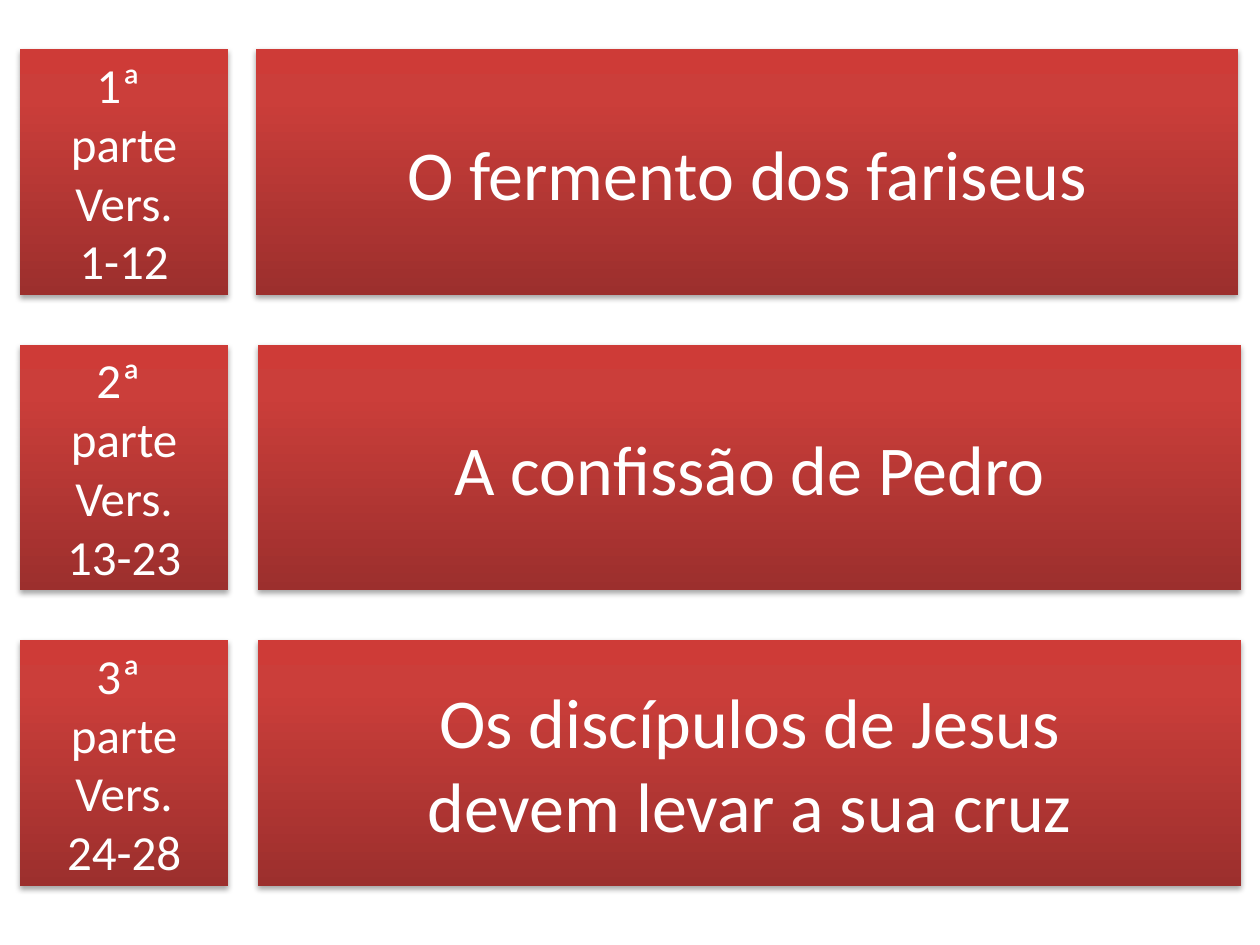
import pptx
import pptx.util
import pptx.dml.color
import pptx.enum.shapes
import pptx.enum.text
import pptx.oxml
import pptx.oxml.ns

Inches = pptx.util.Inches
RGB = pptx.dml.color.RGBColor
WHITE = RGB(0xFF, 0xFF, 0xFF)
DARK = RGB(0x9C, 0x2F, 0x2D)
MID = RGB(0xCB, 0x3E, 0x3A)
LIGHT = RGB(0xCE, 0x3B, 0x37)
BLACK = RGB(0, 0, 0)

PARTS = [
    (["1ª ", "parte", "Vers.", "1-12"], ["O fermento dos fariseus"], 2.03),
    (["2ª ", "parte", "Vers.", "13-23"], ["A confissão de Pedro"], 2.05),
    (["3ª ", "parte", "Vers.", "24-28"],
     ["Os discípulos de Jesus", "devem levar a sua cruz"], 2.05),
]
STOPS = [(0, DARK), (80, MID), (100, LIGHT)]
TOP, STEP, HIGH = 0.39, 2.345, 1.95
LABEL = {"left": 0.16, "width": 1.65, "size": 28}
TITLE = {"width": 7.8, "size": 40}


def add_xml(parent, body):
    space = pptx.oxml.ns.nsdecls("a")
    parent.append(pptx.oxml.parse_xml(body.replace(" ", f" {space} ", 1)))


def paint(shape):
    shape.fill.gradient()
    shape.fill.gradient_angle = 90
    shape.line.fill.background()
    shape.shadow.inherit = False
    props = shape.element.spPr
    stops = props.find(".//" + pptx.oxml.ns.qn("a:gsLst"))
    for old in list(stops):
        stops.remove(old)
    for spot, color in STOPS:
        add_xml(stops, f'<a:gs pos="{spot * 1000}"><a:srgbClr val="{color}"/></a:gs>')
    add_xml(props.find(pptx.oxml.ns.qn("a:effectLst")),
            f'<a:outerShdw blurRad="{pptx.util.Pt(3.1)}" dist="{pptx.util.Pt(1.8)}" '
            f'dir="5400000" rotWithShape="0"><a:srgbClr val="{BLACK}">'
            '<a:alpha val="35000"/></a:srgbClr></a:outerShdw>')


def add_box(slide, lines, top, left, width, size):
    shape = slide.shapes.add_shape(
        pptx.enum.shapes.MSO_SHAPE.RECTANGLE,
        Inches(left), Inches(top), Inches(width), Inches(HIGH))
    paint(shape)
    frame = shape.text_frame
    frame.word_wrap = True
    frame.vertical_anchor = pptx.enum.text.MSO_ANCHOR.MIDDLE
    frame.text = "\n".join(lines)
    style = {"name": "Calibri", "size": pptx.util.Pt(size)}
    for para in frame.paragraphs:
        para.alignment = pptx.enum.text.PP_ALIGN.CENTER
        for run in para.runs:
            for key, value in style.items():
                setattr(run.font, key, value)
            run.font.color.rgb = WHITE


def main():
    deck = pptx.Presentation()
    deck.slide_width, deck.slide_height = Inches(10), Inches(7.5)
    slide = deck.slides.add_slide(deck.slide_layouts[6])
    for row, (label, title, left) in enumerate(PARTS):
        top = TOP + row * STEP
        add_box(slide, label, top, **LABEL)
        add_box(slide, title, top, left, **TITLE)
    deck.save("out.pptx")


if __name__ == "__main__":
    main()
